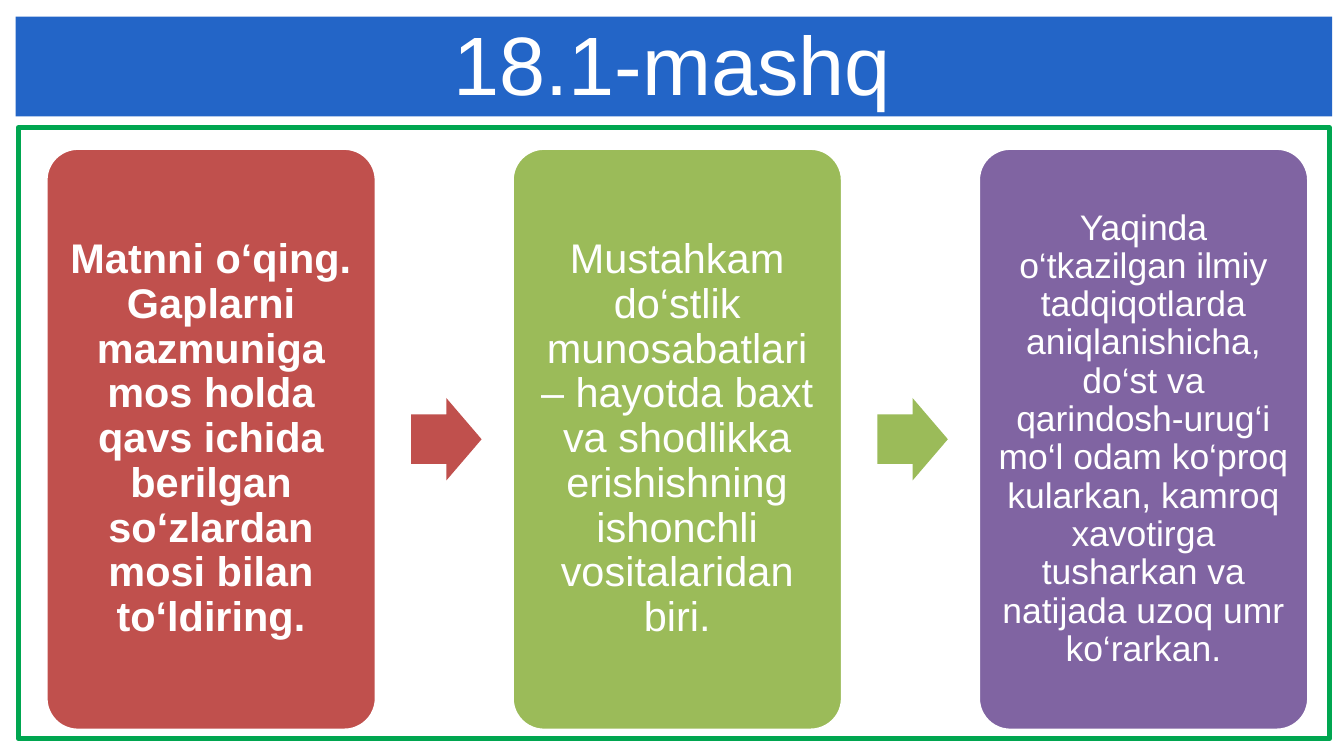
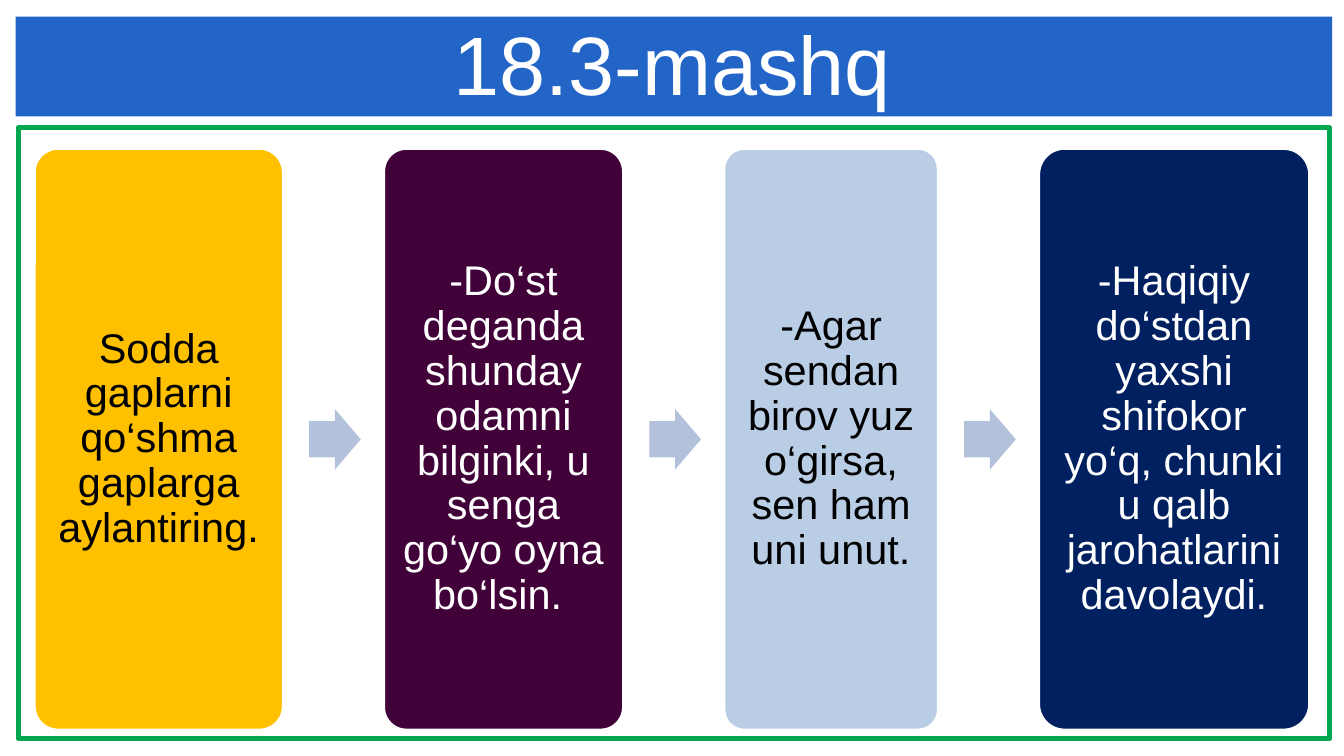
"""Build two exercise slides, each a row of text cards joined by arrows."""
from dataclasses import dataclass

from pptx import Presentation
from pptx.dml.color import RGBColor
from pptx.enum import shapes, text
from pptx.util import Pt

EXERCISES = [
    {
        "title": "18.1-mashq",
        "left": 15.1,
        "gap": 45,
        "cards": [
            ("Matnni o‘qing. Gaplarni mazmuniga mos holda qavs ichida berilgan "
             "so‘zlardan mosi bilan to‘ldiring.",
             {"width": 112.6, "fill": "C0504D", "bold": True, "arrow": "C0504D"}),
            ("Mustahkam do‘stlik munosabatlari – hayotda baxt va shodlikka "
             "erishishning ishonchli vositalaridan biri.",
             {"width": 112.6, "fill": "9BBB59", "arrow": "9BBB59"}),
            ("Yaqinda o‘tkazilgan ilmiy tadqiqotlarda aniqlanishicha, do‘st va "
             "qarindosh-urug‘i mo‘l odam ko‘proq kularkan, kamroq xavotirga "
             "tusharkan va natijada uzoq umr ko‘rarkan.",
             {"width": 112.6, "fill": "8064A2", "size": 12}),
        ],
    },
    {
        "title": "18.3-mashq",
        "left": 11.1,
        "gap": 32.9,
        "cards": [
            ("Sodda gaplarni qo‘shma gaplarga aylantiring.",
             {"width": 85.2, "fill": "FFC000", "color": "000000"}),
            ("-Do‘st deganda shunday odamni bilginki, u senga go‘yo oyna bo‘lsin. ",
             {"width": 82.1, "fill": "400239"}),
            ("-Agar sendan birov yuz o‘girsa, sen ham uni unut.",
             {"width": 73.5, "fill": "B9CDE5", "color": "000000"}),
            ("-Haqiqiy do‘stdan yaxshi shifokor yo‘q, chunki u qalb jarohatlarini "
             "davolaydi.",
             {"width": 92.6, "fill": "002060"}),
        ],
    },
]


@dataclass(frozen=True)
class Theme:
    font: str = "Arial"
    title_size: float = 28
    card_size: float = 14
    band: str = "2365C7"
    frame: str = "00A650"
    light: str = "FFFFFF"
    arrow: str = "B3C1DB"


THEME = Theme()
SLIDE_WIDTH, SLIDE_HEIGHT = 454.3, 255.6
BAND = (5.3, 5.6, 445, 33.8)
FRAME = (6.2, 43.2, 443.2, 206.6)
TITLE = (23.8, 4.3, 406.8, 33.8)
CARD_TOP, CARD_HEIGHT = 49.7, 197.7


def add_shape(slide, kind, box, fill=None, line=None, line_width=2):
    shape = slide.shapes.add_shape(kind, *map(Pt, box))
    shape.shadow.inherit = False
    if fill:
        shape.fill.solid()
        shape.fill.fore_color.rgb = RGBColor.from_string(fill)
    else:
        shape.fill.background()
    if line:
        shape.line.color.rgb = RGBColor.from_string(line)
        shape.line.width = Pt(line_width)
    else:
        shape.line.fill.background()
    return shape


def write(shape, content, size, color, inset=0, bold=False,
          anchor=text.MSO_ANCHOR.MIDDLE, line_spacing=None):
    frame = shape.text_frame
    frame.text = content
    frame.word_wrap = True
    frame.vertical_anchor = anchor
    frame.margin_left = frame.margin_right = Pt(inset)
    frame.margin_top = frame.margin_bottom = Pt(inset)
    paragraph = frame.paragraphs[0]
    paragraph.alignment = text.PP_ALIGN.CENTER
    paragraph.line_spacing = line_spacing
    font = paragraph.runs[0].font
    font.name, font.size, font.bold = THEME.font, Pt(size), bold
    font.color.rgb = RGBColor.from_string(color)


def add_base(slide, title):
    add_shape(slide, shapes.MSO_SHAPE.RECTANGLE, FRAME, line=THEME.frame, line_width=1.8)
    add_shape(slide, shapes.MSO_SHAPE.RECTANGLE, BAND, THEME.band)
    title_box = slide.shapes.add_textbox(*map(Pt, TITLE))
    write(title_box, title, THEME.title_size, THEME.light, anchor=text.MSO_ANCHOR.TOP)


def add_card(slide, left, content, style):
    box = (left, CARD_TOP, style["width"], CARD_HEIGHT)
    card = add_shape(slide, shapes.MSO_SHAPE.ROUNDED_RECTANGLE, box, style["fill"], THEME.light)
    card.adjustments[0] = 0.1
    size = style.get("size", THEME.card_size)
    write(card, content, size, style.get("color", THEME.light), inset=0.3 * size,
          bold=style.get("bold", False), line_spacing=0.9)


def add_arrow(slide, left, gap, fill):
    width, height = 0.53 * gap, 0.62 * gap
    top = CARD_TOP + (CARD_HEIGHT - height) / 2
    box = (left + gap / 4, top, width, height)
    arrow = add_shape(slide, shapes.MSO_SHAPE.RIGHT_ARROW, box, fill)
    arrow.adjustments[0], arrow.adjustments[1] = 0.6, 0.5


def add_exercise(presentation, exercise):
    slide = presentation.slides.add_slide(presentation.slide_layouts[6])
    add_base(slide, exercise["title"])
    left, gap = exercise["left"], exercise["gap"]
    for index, (content, style) in enumerate(exercise["cards"]):
        if index:
            add_arrow(slide, left - gap, gap, arrow_fill)
        add_card(slide, left, content, style)
        arrow_fill = style.get("arrow", THEME.arrow)
        left += style["width"] + gap


def main():
    presentation = Presentation()
    presentation.slide_width, presentation.slide_height = Pt(SLIDE_WIDTH), Pt(SLIDE_HEIGHT)
    for exercise in EXERCISES:
        add_exercise(presentation, exercise)
    presentation.save("out.pptx")


if __name__ == "__main__":
    main()
